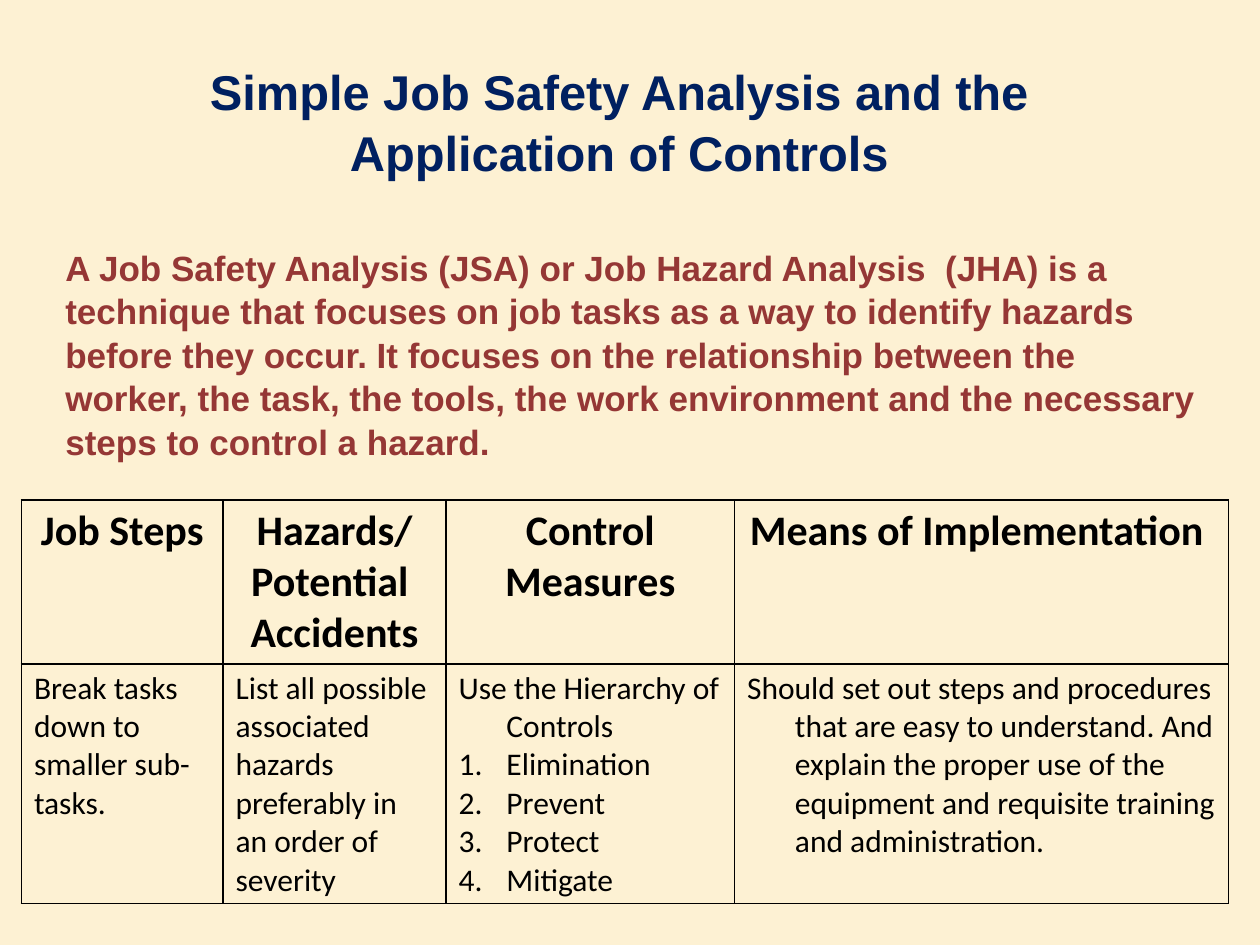
from lxml.etree import SubElement
from pptx import Presentation
from pptx.dml.color import RGBColor
from pptx.enum.text import MSO_ANCHOR, MSO_AUTO_SIZE, PP_ALIGN
from pptx.oxml.ns import qn
from pptx.util import Inches, Pt


def style(par, face, size, tone, bold):
    font = par.font
    font.name, font.size, font.bold = face, Pt(size), bold
    font.color.rgb = RGBColor.from_string(tone)


def border(cell):
    props = cell._tc.get_or_add_tcPr()
    for side in ("a:lnL", "a:lnR", "a:lnT", "a:lnB"):
        line = SubElement(props, qn(side), w=str(Pt(1)))
        fill = SubElement(line, qn("a:solidFill"))
        SubElement(fill, qn("a:srgbClr"), val="000000")


deck = Presentation()
deck.slide_width, deck.slide_height = Inches(10), Inches(7.5)
slide = deck.slides.add_slide(deck.slide_layouts[5])
back = slide.background.fill
back.solid()
back.fore_color.rgb = RGBColor.from_string("FDF1D3")

title = slide.shapes.title
title.left, title.top = Inches(0), Inches(0.42)
title.width, title.height = Inches(10), Inches(1.83)
frame = title.text_frame
frame.auto_size = MSO_AUTO_SIZE.NONE
frame.vertical_anchor = MSO_ANCHOR.TOP
frame.margin_right = Inches(0.27)
frame.text = "Simple Job Safety Analysis and the\vApplication of Controls"
par = frame.paragraphs[0]
par.alignment = PP_ALIGN.CENTER
par.line_spacing = 1.04
style(par, "Arial", 27.9, "002060", True)

intro = slide.shapes.add_textbox(Inches(0.42), Inches(1.89), Inches(9.25), Inches(1.78))
frame = intro.text_frame
frame.word_wrap = True
frame.text = (
    "A Job Safety Analysis (JSA) or Job Hazard Analysis  (JHA) is a technique "
    "that focuses on job tasks as a way to identify hazards before they occur. "
    "It focuses on the relationship between the worker, the task, the tools, "
    "the work environment and the necessary steps to control a hazard."
)
par = frame.paragraphs[0]
par.line_spacing = 1.04
style(par, "Arial", 20, "953735", True)

steps = ["Elimination", "Prevent", "Protect", "Mitigate"]
rows = [
    [
        ["Job Steps"],
        ["Hazards/ Potential ", "Accidents"],
        ["Control", "Measures"],
        ["Means of Implementation "],
    ],
    [
        ["Break tasks down to smaller sub-tasks."],
        ["List all possible associated hazards preferably in an order of severity"],
        ["Use the Hierarchy of Controls"] + steps,
        [
            "Should set out steps and procedures that are easy to understand. "
            "And explain the proper use of the equipment and requisite training "
            "and administration."
        ],
    ],
]
table = slide.shapes.add_table(
    2, 4, Inches(0.17), Inches(3.97), Inches(9.58), Inches(3.2)
).table
table.first_row = table.horz_banding = False
for col, width in zip(table.columns, [1.6, 1.77, 2.29, 3.92]):
    col.width = Inches(width)
for row, height in zip(table.rows, [1.3, 1.9]):
    row.height = Inches(height)

for r, row in enumerate(rows):
    head = r == 0
    for c, lines in enumerate(row):
        cell = table.cell(r, c)
        cell.margin_top = cell.margin_bottom = Inches(0.04)
        border(cell)
        cell.fill.background()
        cell.text = "\n".join(lines)
        for par in cell.text_frame.paragraphs:
            par.alignment = PP_ALIGN.CENTER if head else PP_ALIGN.LEFT
            if not head and c > 1:
                props = par._p.get_or_add_pPr()
                props.set("marL", str(Inches(0.38)))
                props.set("indent", str(Inches(-0.38)))
                if par.text in steps:
                    SubElement(props, qn("a:buAutoNum"), type="arabicPeriod")
            style(par, "Calibri", 24 if head else 18, "000000", head)

deck.save("out.pptx")
